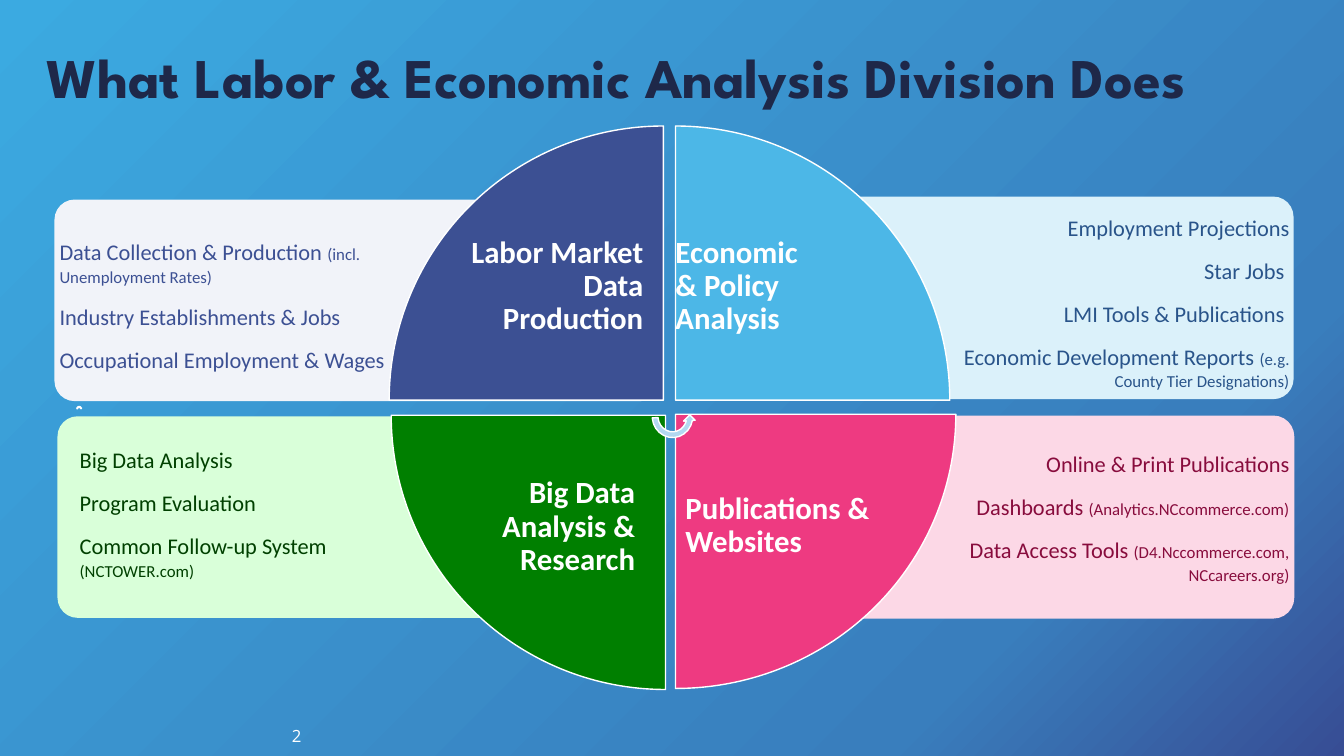
from collections import namedtuple

from lxml import etree
from pptx import Presentation
from pptx.dml.color import RGBColor
from pptx.enum import shapes, text
from pptx.oxml import parse_xml
from pptx.oxml.ns import nsdecls, qn
from pptx.util import Inches, Pt

COLORS = {
    "sky": "3BAAE1", "blue": "397EBD", "indigo": "374D94",
    "white": "FFFFFF", "navy": "1E2849", "arrow": "B2D8F1",
    "labor": "3C5093", "labor_pale": "F1F3F9", "labor_text": "3C5093",
    "policy": "4CB7E7", "policy_pale": "DBF1FA", "policy_text": "29548A",
    "data": "007F00", "data_pale": "D9FFD9", "data_text": "004000",
    "web": "EE3A81", "web_pale": "FCD8E6", "web_text": "880C3D",
}
SHAPE = shapes.MSO_SHAPE
ALIGN = text.PP_ALIGN
ANCHOR = text.MSO_ANCHOR
BODY, SMALL = 16, 12
LABEL_SHARE = 0.706  # side of the square inscribed in a quarter circle

Box = namedtuple("Box", "left top width height")
# list_area: left and top offsets from the panel, then width
# label_pad: gap between the label and the vertical axis
Quadrant = namedtuple(
    "Quadrant", "theme panel list_area items wedge turn label label_pad is_left is_top")

QUADRANTS = [
    Quadrant("web", Box(6.71, 4.13, 6.12, 2), (2.79, 0.04, 3.29),
             [[("Online & Print Publications", BODY)],
              [("Dashboards ", BODY), ("(Analytics.NCcommerce.com)", SMALL)],
              [("Data Access Tools ", BODY),
               ("(D4.Nccommerce.com, NCcareers.org)", SMALL)]],
             Box(6.7, 4.11, 2.78, 2.72), 180, "Publications & Websites", 0.1, False, False),
    Quadrant("data", Box(0.57, 4.13, 6.01, 2), (0.22, 0, 2.65),
             [[("Big Data Analysis", BODY)],
              [("Program Evaluation", BODY)],
              [("Common Follow-up System ", BODY), ("(NCTOWER.com)", SMALL)]],
             Box(3.88, 4.12, 2.72, 2.72), 270, "Big Data Analysis & Research", 0.3, True, False),
    Quadrant("policy", Box(6.71, 1.95, 6.12, 2.01), (2.67, 0.04, 3.41),
             [[("Employment Projections", BODY)],
              [("Star Jobs ", BODY)],
              [("LMI Tools & Publications ", BODY)],
              [("Economic Development Reports ", BODY),
               ("(e.g. County Tier Designations)", SMALL)]],
             Box(6.7, 1.25, 2.72, 2.72), 90, "Economic\v& Policy\vAnalysis", 0, False, True),
    Quadrant("labor", Box(0.54, 1.98, 6.01, 2), (0.05, 0.04, 3.32),
             [[("Data Collection & Production ", BODY),
               ("(incl. Unemployment Rates)", SMALL)],
              [("Industry Establishments & Jobs", BODY)],
              [("Occupational Employment & Wages", BODY)]],
             Box(3.86, 1.25, 2.72, 2.72), 0, "Labor Market Data Production", 0.2, True, True),
]


def rgb(name):
    return RGBColor.from_string(COLORS[name])


def inches(box):
    return [Inches(length) for length in box]


def write(holder, paragraphs, *, color, font="Calibri", bold=False, align=ALIGN.LEFT,
          anchor=ANCHOR.MIDDLE, spacing=1.0, after=0, insets=(0, 0, 0, 0)):
    """Fill a holder with paragraphs, each a list of (words, size) runs."""
    frame = holder.text_frame
    frame.word_wrap = True
    frame.auto_size = text.MSO_AUTO_SIZE.NONE
    frame.vertical_anchor = anchor
    (frame.margin_left, frame.margin_top,
     frame.margin_right, frame.margin_bottom) = inches(insets)
    for index, runs in enumerate(paragraphs):
        paragraph = frame.add_paragraph() if index else frame.paragraphs[0]
        properties = paragraph._p.get_or_add_pPr()
        properties.set("marL", "0")
        properties.set("indent", "0")
        etree.SubElement(properties, qn("a:buNone"))
        paragraph.alignment = align
        paragraph.line_spacing = spacing
        paragraph.space_before = Pt(0)
        paragraph.space_after = Pt(after)
        for words, size in runs:
            for index_line, line in enumerate(words.split("\v")):
                if index_line:
                    paragraph.add_line_break()
                run = paragraph.add_run()
                run.text = line
                run.font.name = font
                run.font.size = Pt(size)
                run.font.bold = bold
                run.font.color.rgb = rgb(color)


def add_filled(slide, preset, box, fill, line=None):
    shape = slide.shapes.add_shape(preset, *inches(box))
    shape.shadow.inherit = False
    shape.fill.solid()
    shape.fill.fore_color.rgb = rgb(fill)
    if line:
        shape.line.color.rgb = rgb(line)
        shape.line.width = Pt(1)
    else:
        shape.line.fill.background()
    return shape


def place(holder, box):
    holder.left, holder.top, holder.width, holder.height = inches(box)
    # Bring the placeholder in front of what is drawn so far
    holder._element.getparent().append(holder._element)


def paint_background(slide):
    stops = "".join(
        f'<a:gs pos="{share * 1000}"><a:srgbClr val="{COLORS[name]}"/></a:gs>'
        for share, name in ((0, "sky"), (78, "blue"), (100, "indigo")))
    slide._element.cSld.insert(0, parse_xml(
        f'<p:bg {nsdecls("p", "a")}><p:bgPr><a:gradFill rotWithShape="1">'
        f'<a:gsLst>{stops}</a:gsLst><a:path path="circle">'
        '<a:fillToRect r="100000" b="100000"/></a:path></a:gradFill>'
        '<a:effectLst/></p:bgPr></p:bg>'))


def add_panel(slide, quadrant, holder):
    panel = quadrant.panel
    line = "web_pale" if quadrant.theme == "web" else None
    card = add_filled(slide, SHAPE.ROUNDED_RECTANGLE, panel, quadrant.theme + "_pale", line)
    card.adjustments[0] = 0.1
    left, top, width = quadrant.list_area
    place(holder, Box(panel.left + left, panel.top + top, width, 1.9 + 0.1 * quadrant.is_top))
    write(holder, quadrant.items, color=quadrant.theme + "_text", spacing=1.08, after=10,
          align=ALIGN.LEFT if quadrant.is_left else ALIGN.RIGHT)


def add_wedge(slide, quadrant):
    box = quadrant.wedge
    wedge = add_filled(slide, SHAPE.PIE_WEDGE, box, quadrant.theme, "white")
    wedge.rotation = quadrant.turn
    # The label sits in the corner nearest the centre of the circle
    width, height = box.width * LABEL_SHARE, box.height * LABEL_SHARE
    label = slide.shapes.add_textbox(*inches((
        box.left + (box.width - width) * quadrant.is_left,
        box.top + (box.height - height) * quadrant.is_top, width, height)))
    pad = quadrant.label_pad
    write(label, [[(quadrant.label, 22)]], color="white", bold=True, spacing=0.9,
          align=ALIGN.RIGHT if quadrant.is_left else ALIGN.LEFT,
          anchor=ANCHOR.TOP if quadrant.is_top else ANCHOR.MIDDLE,
          insets=(0, 0.3, pad, 0) if quadrant.is_left else (pad, 0.3, 0, 0))


def add_cycle_arrows(slide):
    add_filled(slide, SHAPE.CIRCULAR_ARROW, Box(0.76, 4.03, 0.05, 0.05), "arrow", "white")
    hub = add_filled(slide, SHAPE.CIRCULAR_ARROW, Box(6.44, 3.89, 0.46, 0.48), "arrow", "white")
    hub.rotation = 355.4
    hub._element.spPr.xfrm.set("flipV", "1")


def main():
    deck = Presentation()
    deck.slide_width, deck.slide_height = Inches(13.33), Inches(7.5)
    # Comparison layout: a title and four bodies
    slide = deck.slides.add_slide(deck.slide_layouts[4])
    title, *bodies = list(slide.placeholders)
    paint_background(slide)

    # Panels with lists, then the circle in front of them
    for quadrant, body in zip(QUADRANTS, bodies):
        add_panel(slide, quadrant, body)
    for quadrant in reversed(QUADRANTS):
        add_wedge(slide, quadrant)
    add_cycle_arrows(slide)

    # Slide number and title
    number = slide.shapes.add_textbox(*inches((0.09, 7.1, 3, 0.4)))
    write(number, [[("2", 12)]], color="white", font="Open Sans", align=ALIGN.RIGHT,
          insets=(0.1, 0.05, 0.1, 0.05))
    place(title, Box(0.36, 0.37, 12.73, 0.77))
    write(title, [[("What Labor & Economic Analysis Division Does", 40)]], color="navy",
          font="League Spartan", bold=True, insets=(0.1, 0.05, 0.1, 0.05))
    deck.save("out.pptx")


if __name__ == "__main__":
    main()
